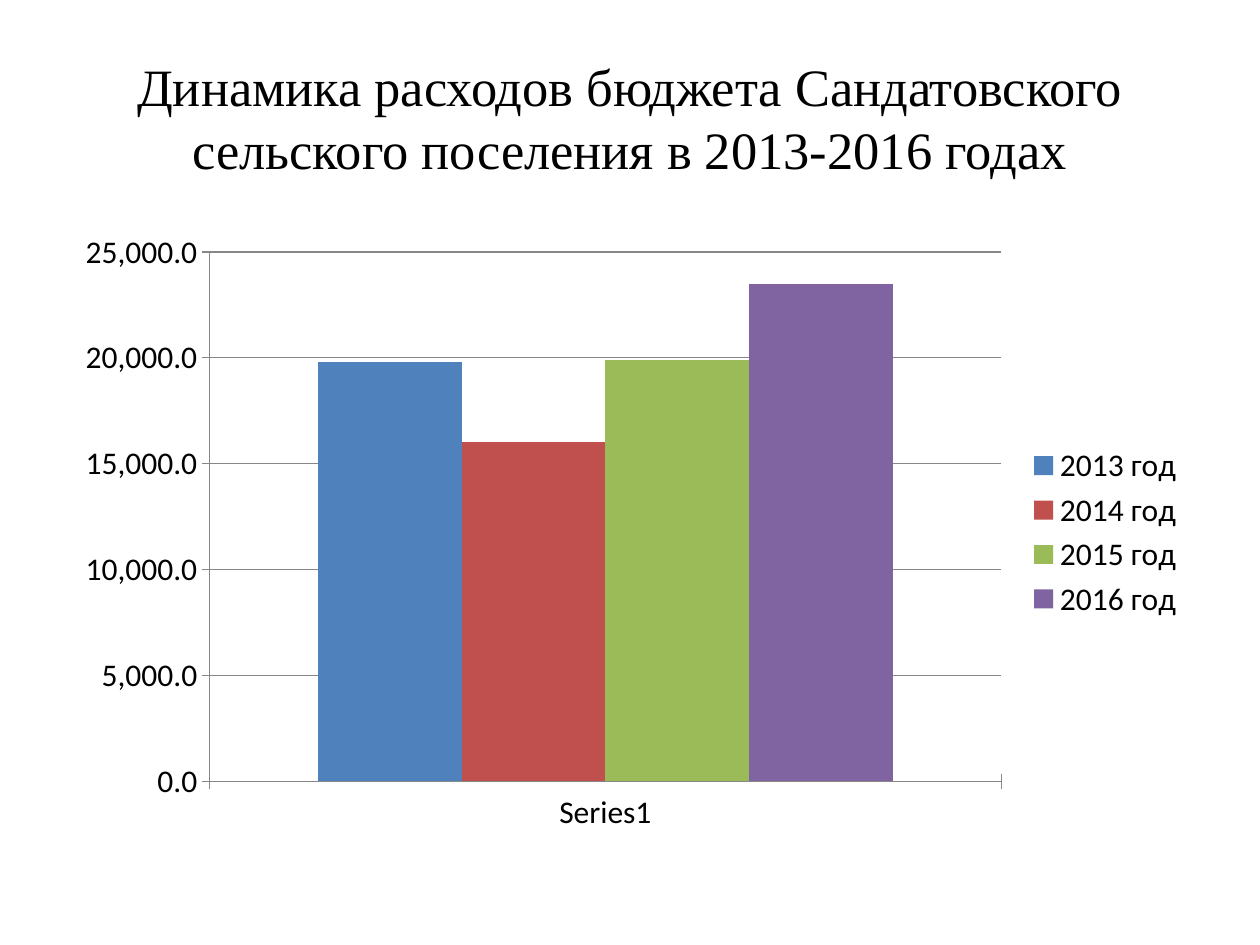
from pptx import Presentation
from pptx.chart.data import CategoryChartData
from pptx.dml.color import RGBColor
from pptx.enum.chart import XL_CHART_TYPE, XL_LEGEND_POSITION, XL_TICK_MARK
from pptx.enum.text import MSO_ANCHOR, PP_ALIGN
from pptx.util import Inches, Pt

COLUMN_CLUSTERED = XL_CHART_TYPE.COLUMN_CLUSTERED
LEGEND_RIGHT = XL_LEGEND_POSITION.RIGHT
TICK_CROSS = XL_TICK_MARK.CROSS
MIDDLE = MSO_ANCHOR.MIDDLE
CENTER = PP_ALIGN.CENTER

TITLE_ONLY = 5
COLORS = {
    "background": "FFFFFF",
    "text": "000000",
    "axis": "878787",
    "2013 год": "4F81BD",
    "2014 год": "C0504D",
    "2015 год": "9BBB59",
    "2016 год": "8064A2",
}
EXPENSES = {
    "2013 год": 19800,
    "2014 год": 16000,
    "2015 год": 19900,
    "2016 год": 23500,
}


def color(name):
    return RGBColor.from_string(COLORS[name])


def format_font(font, size, name):
    font.size = Pt(size)
    font.name = name
    font.bold = False
    font.color.rgb = color("text")


def write_text(shape, text, *, size, font, align=CENTER, anchor=MIDDLE):
    frame = shape.text_frame
    frame.word_wrap = True
    frame.vertical_anchor = anchor
    paragraph = frame.paragraphs[0]
    paragraph.alignment = align
    run = paragraph.add_run()
    run.text = text
    format_font(run.font, size, font)


def add_title(slide, text):
    title = slide.shapes.title
    title.left, title.top = Inches(0.5), Inches(0.3)
    title.width, title.height = Inches(9), Inches(1.25)
    write_text(title, text, size=30, font="Times New Roman")


def format_line(line):
    line.color.rgb = color("axis")
    line.width = Pt(0.75)


def format_axes(chart):
    for axis in (chart.category_axis, chart.value_axis):
        axis.major_tick_mark = TICK_CROSS
        format_line(axis.format.line)

    value_axis = chart.value_axis
    value_axis.minimum_scale = 0
    value_axis.maximum_scale = 25000
    value_axis.major_unit = 5000
    value_axis.has_major_gridlines = True
    format_line(value_axis.major_gridlines.format.line)
    value_axis.tick_labels.number_format = "#,##0.0"
    value_axis.tick_labels.number_format_is_linked = False


def add_expense_chart(slide):
    data = CategoryChartData(number_format="#,##0.0")
    data.categories = ["Series1"]
    for year, amount in EXPENSES.items():
        data.add_series(year, [amount])

    frame = slide.shapes.add_chart(
        COLUMN_CLUSTERED, Inches(0.5), Inches(1.75), Inches(9), Inches(4.95), data
    )
    chart = frame.chart
    chart.has_title = False
    format_font(chart.font, 18, "Calibri")
    format_axes(chart)

    # One colour per year
    plot = chart.plots[0]
    plot.vary_by_categories = False
    plot.gap_width = 150
    for series in plot.series:
        series.format.fill.solid()
        series.format.fill.fore_color.rgb = color(series.name)

    chart.has_legend = True
    chart.legend.position = LEGEND_RIGHT
    chart.legend.include_in_layout = False


def main():
    presentation = Presentation()
    presentation.slide_width = Inches(10)
    presentation.slide_height = Inches(7.5)
    slide = presentation.slides.add_slide(presentation.slide_layouts[TITLE_ONLY])
    slide.background.fill.solid()
    slide.background.fill.fore_color.rgb = color("background")

    add_title(
        slide,
        "Динамика расходов бюджета Сандатовского сельского поселения в 2013-2016 годах",
    )
    add_expense_chart(slide)
    presentation.save("out.pptx")


if __name__ == "__main__":
    main()
